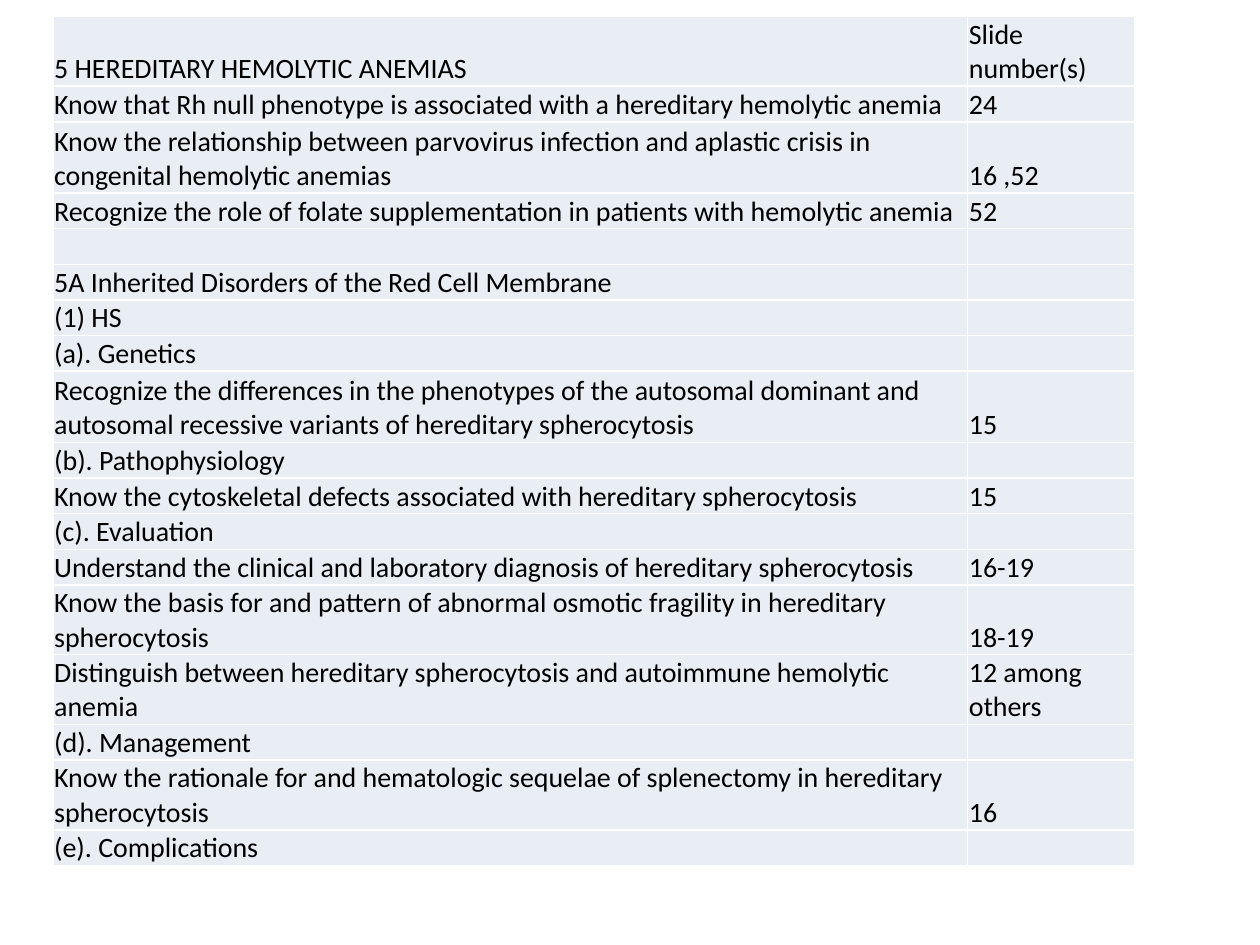
from dataclasses import dataclass

from lxml.etree import SubElement
from pptx import Presentation
from pptx.dml.color import RGBColor
from pptx.enum.text import MSO_ANCHOR
from pptx.oxml.ns import qn
from pptx.util import Inches, Pt


@dataclass(frozen=True)
class Theme:
    font: str = "Calibri"
    size: int = 16
    text: str = "000000"
    fill: str = "E9EDF4"
    border: str = "FFFFFF"
    border_width: int = 1
    inset: float = 0.01


SINGLE, SNUG, DOUBLE = 1, 1.84, 2
GRID_ROWS = 26.5
COLUMN_SHARES = (0.726, 0.133)

OBJECTIVES = [
    ("5 HEREDITARY HEMOLYTIC ANEMIAS", "Slide number(s)", SNUG),
    ("Know that Rh null phenotype is associated with a hereditary hemolytic anemia", "24", SINGLE),
    ("Know the relationship between parvovirus infection and aplastic crisis in "
     "congenital hemolytic anemias", "16 ,52", DOUBLE),
    ("Recognize the role of folate supplementation in patients with hemolytic anemia", "52", SINGLE),
    ("", "", SINGLE),
    ("5A Inherited Disorders of the Red Cell Membrane", "", SINGLE),
    ("(1) HS", "", SINGLE),
    ("(a). Genetics", "", SINGLE),
    ("Recognize the differences in the phenotypes of the autosomal dominant and "
     "autosomal recessive variants of hereditary spherocytosis", "15", DOUBLE),
    ("(b). Pathophysiology", "", SINGLE),
    ("Know the cytoskeletal defects associated with hereditary spherocytosis", "15", SINGLE),
    ("(c). Evaluation", "", SINGLE),
    ("Understand the clinical and laboratory diagnosis of hereditary spherocytosis", "16-19", SINGLE),
    ("Know the basis for and pattern of abnormal osmotic fragility in hereditary "
     "spherocytosis", "18-19", SNUG),
    ("Distinguish between hereditary spherocytosis and autoimmune hemolytic anemia",
     "12 among others", SNUG),
    ("(d). Management", "", SINGLE),
    ("Know the rationale for and hematologic sequelae of splenectomy in hereditary "
     "spherocytosis", "16", SNUG),
    ("(e). Complications", "", SINGLE),
]


def write(tf, text, *, font, size, color):
    p = tf.paragraphs[0]
    if not text:
        SubElement(p._p, qn("a:endParaRPr"), sz=str(size * 100))
        return
    r = p.add_run()
    r.text = text
    r.font.name = font
    r.font.size = Pt(size)
    r.font.color.rgb = RGBColor.from_string(color)


class Deck:
    def __init__(self, theme, width, height):
        self.theme = theme
        self.prs = Presentation()
        self.prs.slide_width = Inches(width)
        self.prs.slide_height = Inches(height)
        self.s = None

    def add_slide(self):
        self.s = self.prs.slides.add_slide(self.prs.slide_layouts[6])

    def x(self, share):
        return round(self.prs.slide_width * share)

    def y(self, rows):
        return round(self.prs.slide_height * rows / GRID_ROWS)

    def border(self, cell):
        tc_pr = cell._tc.get_or_add_tcPr()
        for side in ("L", "R", "T", "B"):
            ln = SubElement(tc_pr, qn(f"a:ln{side}"), w=str(Pt(self.theme.border_width)))
            fill = SubElement(ln, qn("a:solidFill"))
            SubElement(fill, qn("a:srgbClr"), val=self.theme.border)

    def cell(self, cell, text):
        t = self.theme
        self.border(cell)
        cell.fill.solid()
        cell.fill.fore_color.rgb = RGBColor.from_string(t.fill)
        cell.margin_left = cell.margin_right = cell.margin_top = Inches(t.inset)
        cell.margin_bottom = 0
        cell.vertical_anchor = MSO_ANCHOR.BOTTOM
        write(cell.text_frame, text, font=t.font, size=t.size, color=t.text)

    def table(self, records, left, top, shares):
        height = sum(units for *_, units in records)
        frame = self.s.shapes.add_table(len(records), len(shares), self.x(left), self.y(top),
                                        self.x(sum(shares)), self.y(height))
        tbl = frame.table
        tbl.first_row = tbl.horz_banding = False
        for column, share in zip(tbl.columns, shares):
            column.width = self.x(share)
        for row, (*texts, units) in zip(tbl.rows, records):
            row.height = self.y(units)
            for cell, text in zip(row.cells, texts):
                self.cell(cell, text)


def main():
    deck = Deck(Theme(), 10, 7.5)
    deck.add_slide()
    deck.table(OBJECTIVES, 0.042, 0.46, COLUMN_SHARES)
    deck.prs.save("out.pptx")


if __name__ == "__main__":
    main()
